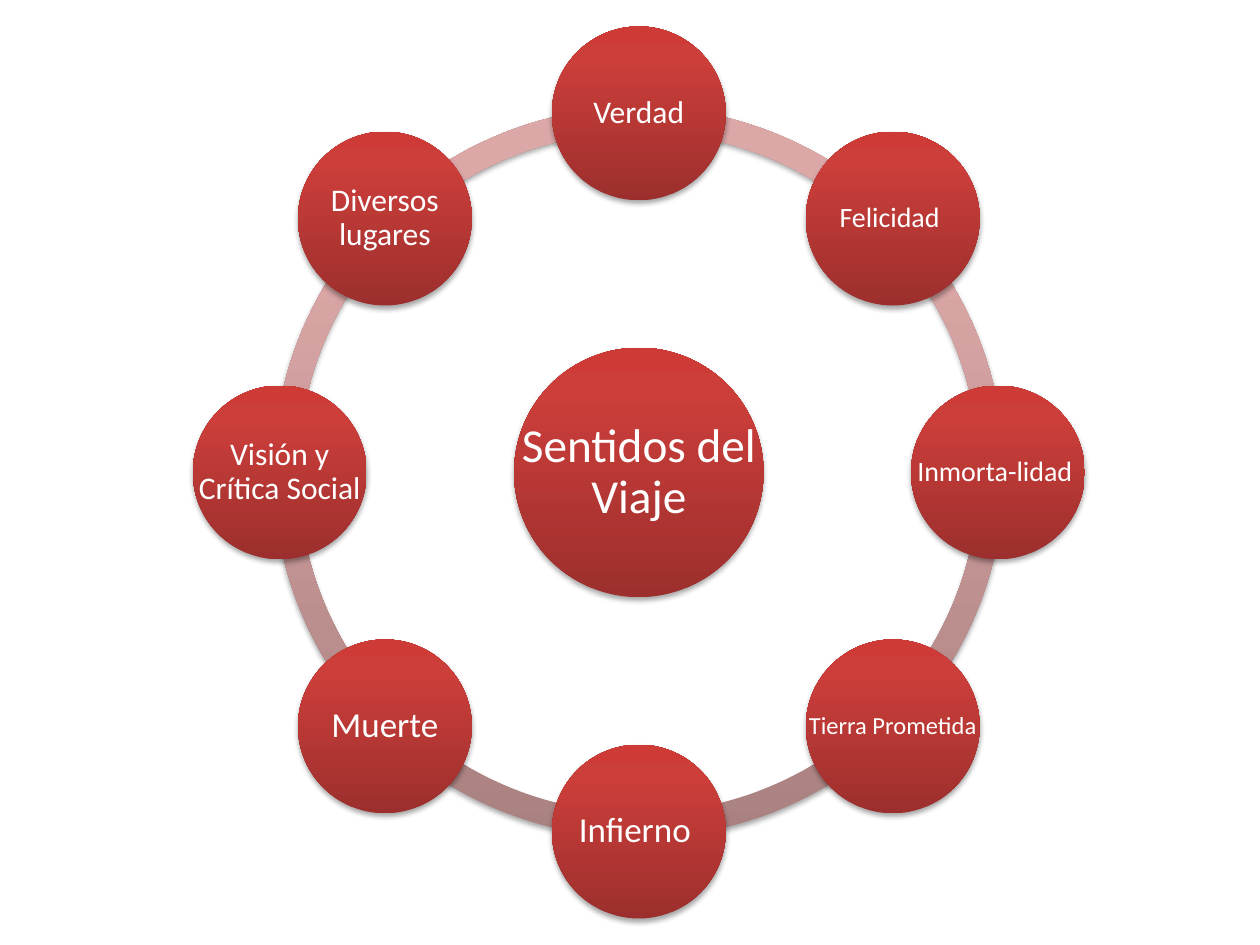
from copy import deepcopy
from math import cos, radians, sin

from lxml.etree import SubElement
from pptx import Presentation
from pptx.dml.color import RGBColor
from pptx.enum.shapes import MSO_SHAPE
from pptx.enum.text import MSO_ANCHOR, PP_ALIGN
from pptx.oxml.ns import qn
from pptx.util import Inches, Pt

CENTER_X, CENTER_Y = 5.07, 3.75
ORBIT_RADIUS = 2.85
RING_SIZE, HUB_SIZE, NODE_SIZE = 5.8, 1.98, 1.38

# Colours at 0, 80 and 100 % of each gradient, from bottom to top
RING_COLORS = ("A98180", "DBA7A7", "DDA7A6")
CIRCLE_COLORS = ("9C2F2D", "CB3E3A", "CE3B37")

# Text, size and inset, clockwise from the top
NODES = [
    ("Verdad", 18, 0.03),
    ("Felicidad ", 16, 0.02),
    ("Inmorta-lidad ", 16, 0.02),
    ("Tierra Prometida", 14, 0.02),
    ("Infierno ", 20, 0.03),
    ("Muerte", 20, 0.03),
    ("Visión y Crítica Social", 18, 0.03),
    ("Diversos lugares", 18, 0.03),
]


def color(value):
    return RGBColor.from_string(value)


def centered_box(x, y, size):
    return (Inches(x - size / 2), Inches(y - size / 2), Inches(size), Inches(size))


def set_gradient(shape, colors):
    shape.fill.gradient()
    shape.fill.gradient_angle = 90
    stop_list = shape._element.spPr.find(qn("a:gradFill")).find(qn("a:gsLst"))
    stop_list.append(deepcopy(stop_list[-1]))
    for stop, position, value in zip(shape.fill.gradient_stops, (0, 0.8, 1), colors):
        stop.position = position
        stop.color.rgb = color(value)


def set_shadow(shape):
    shape.shadow.inherit = False
    effects = shape._element.spPr.find(qn("a:effectLst"))
    shadow = SubElement(effects, qn("a:outerShdw"), blurRad=str(Pt(3.1)),
                        dist=str(Pt(1.8)), dir="5400000", rotWithShape="0")
    shadow_color = SubElement(shadow, qn("a:srgbClr"), val="000000")
    SubElement(shadow_color, qn("a:alpha"), val="35000")


def add_gradient_shape(slide, kind, x, y, size, colors):
    shape = slide.shapes.add_shape(kind, *centered_box(x, y, size))
    set_gradient(shape, colors)
    shape.line.fill.background()
    set_shadow(shape)
    return shape


def add_text(slide, text, x, y, box_size, *, size, inset, font="Calibri", fill="FFFFFF"):
    frame = slide.shapes.add_textbox(*centered_box(x, y, box_size)).text_frame
    frame.word_wrap = True
    frame.vertical_anchor = MSO_ANCHOR.MIDDLE
    frame.margin_left = frame.margin_right = Inches(inset)
    frame.margin_top = frame.margin_bottom = Inches(inset)
    paragraph = frame.paragraphs[0]
    paragraph.alignment = PP_ALIGN.CENTER
    paragraph.line_spacing = 0.9
    run = paragraph.add_run()
    run.text = text
    run.font.name = font
    run.font.size = Pt(size)
    run.font.color.rgb = color(fill)


def add_ring(slide, count):
    step = 360 / count
    for index in range(count):
        arc = add_gradient_shape(slide, MSO_SHAPE.BLOCK_ARC, CENTER_X, CENTER_Y,
                                 RING_SIZE, RING_COLORS)
        # Angles are stored in 60000ths of a degree, adjustments in 100000ths
        arc.adjustments[0] = index * step * 0.6
        arc.adjustments[1] = (index + 1) % count * step * 0.6
        arc.adjustments[2] = 0.034


def add_circle(slide, text, x, y, diameter, *, size, inset):
    add_gradient_shape(slide, MSO_SHAPE.OVAL, x, y, diameter, CIRCLE_COLORS)
    add_text(slide, text, x, y, diameter, size=size, inset=inset)


def main():
    presentation = Presentation()
    presentation.slide_width = Inches(10)
    presentation.slide_height = Inches(7.5)
    slide = presentation.slides.add_slide(presentation.slide_layouts[6])

    # Ring behind the circles
    add_ring(slide, len(NODES))

    # Hub
    add_circle(slide, "Sentidos del Viaje", CENTER_X, CENTER_Y, HUB_SIZE,
               size=27, inset=0.04)

    # Circles around the hub
    for index, (text, size, inset) in enumerate(NODES):
        angle = radians(index * 360 / len(NODES) - 90)
        add_circle(slide, text, CENTER_X + ORBIT_RADIUS * cos(angle),
                   CENTER_Y + ORBIT_RADIUS * sin(angle), NODE_SIZE,
                   size=size, inset=inset)

    presentation.save("out.pptx")


if __name__ == "__main__":
    main()
